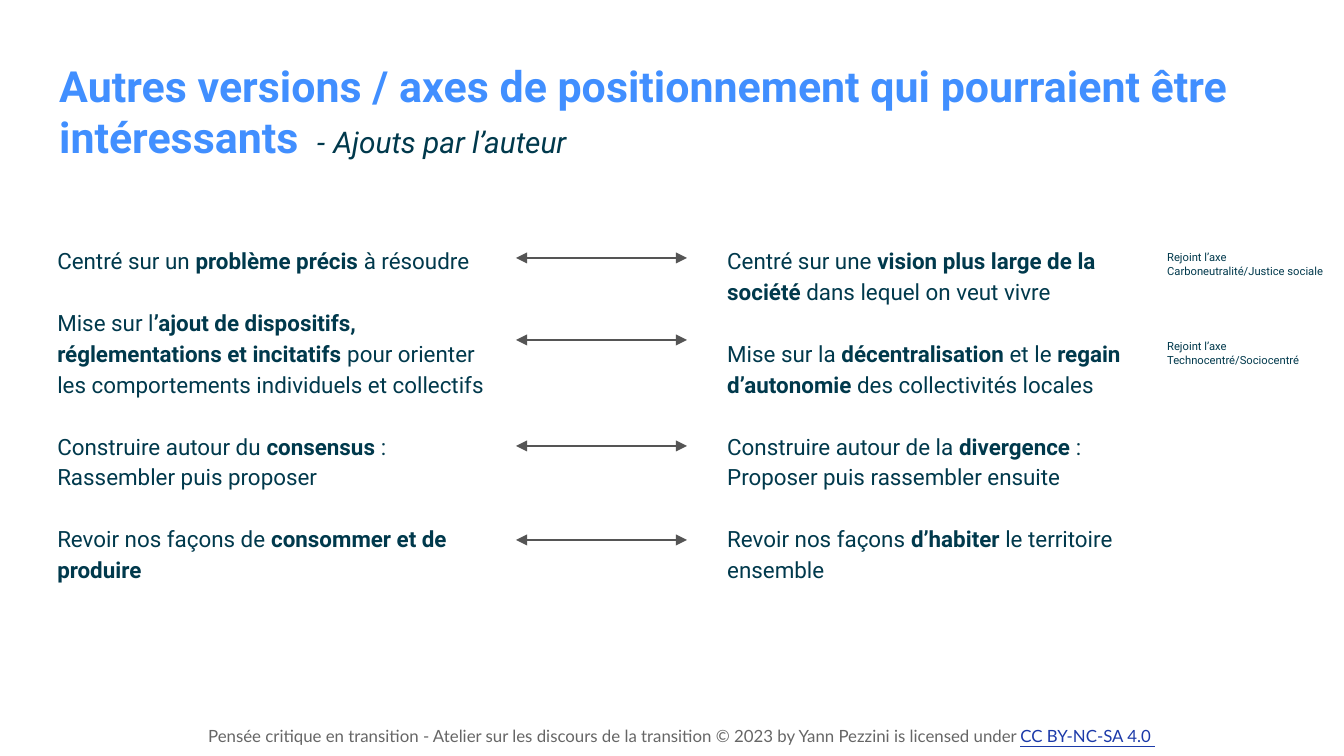
import pptx
import pptx.util
import pptx.dml.color
import pptx.enum.shapes
import pptx.enum.text
import lxml.etree

SCALE = 914400 / 134.4
BLUE = pptx.dml.color.RGBColor(0x41, 0x8F, 0xFF)
NAVY = pptx.dml.color.RGBColor(0x00, 0x39, 0x4C)
GRAY = pptx.dml.color.RGBColor(0x66, 0x66, 0x66)
LINK_BLUE = pptx.dml.color.RGBColor(0x1C, 0x3A, 0xA9)
ARROW_GRAY = pptx.dml.color.RGBColor(0x55, 0x55, 0x55)


def px(length):
    return pptx.util.Emu(round(length * SCALE))


def add_text(paragraphs, box, size, color=NAVY, font="Roboto", line_spacing=1.0, gap=0):
    shape = slide.shapes.add_textbox(*[px(length) for length in box])
    frame = shape.text_frame
    frame.word_wrap = True
    frame.auto_size = pptx.enum.text.MSO_AUTO_SIZE.NONE
    frame.margin_left = frame.margin_right = pptx.util.Inches(0.1)
    frame.margin_top = frame.margin_bottom = pptx.util.Inches(0.1)
    for index, pieces in enumerate(paragraphs):
        paragraph = frame.paragraphs[0] if index == 0 else frame.add_paragraph()
        paragraph.line_spacing = line_spacing
        if index < len(paragraphs) - 1:
            paragraph.space_after = pptx.util.Pt(gap)
        for text, style in pieces:
            run = paragraph.add_run()
            run.text = text
            run.font.name = font
            run.font.size = pptx.util.Pt(style.get("size", size))
            run.font.bold = style.get("bold", False)
            run.font.italic = style.get("italic", False)
            run.font.underline = style.get("underline", False)
            run.font.color.rgb = style.get("color", color)


presentation = pptx.Presentation()
presentation.slide_width = px(1344)
presentation.slide_height = px(756)
slide = presentation.slides.add_slide(presentation.slide_layouts[6])

PLAIN = {}
BOLD = {"bold": True}
SUBTITLE = {"size": 16, "italic": True, "color": NAVY}

add_text(
    [[
        ("Pensée critique en transition - Atelier sur les discours de la transition "
         "© 2023 by Yann Pezzini is licensed under ", PLAIN),
        ("CC BY-NC-SA 4.0 ", {"color": LINK_BLUE, "underline": True}),
    ]],
    (195, 712, 1028, 82), size=9, color=GRAY, font="Lato",
)

add_text(
    [[
        ("Autres versions / axes de positionnement qui pourraient être intéressants ", BOLD),
        (" -", SUBTITLE),
        (" ", {"size": 18, "color": NAVY}),
        ("Ajouts par l’auteur", SUBTITLE),
    ]],
    (46, 46, 1253, 85), size=23, color=BLUE,
)

left_positions = [
    [("Centré sur un ", PLAIN), ("problème précis ", BOLD), ("à résoudre", PLAIN)],
    [("Mise sur l", PLAIN), ("’ajout de dispositifs, réglementations et incitatifs ", BOLD),
     ("pour orienter les comportements individuels et collectifs", PLAIN)],
    [("Construire autour du ", PLAIN), ("consensus", BOLD), (" : Rassembler puis proposer", PLAIN)],
    [("Revoir nos façons de ", PLAIN), ("consommer et de produire", BOLD)],
]
right_positions = [
    [("Centré sur une ", PLAIN), ("vision plus large de la société", BOLD),
     (" dans lequel on veut vivre", PLAIN)],
    [("Mise sur la ", PLAIN), ("décentralisation", BOLD), (" et le ", PLAIN),
     ("regain d’autonomie ", BOLD), ("des collectivités locales", PLAIN)],
    [("Construire autour de la ", PLAIN), ("divergence", BOLD),
     (" : Proposer puis rassembler ensuite", PLAIN)],
    [("Revoir nos façons ", PLAIN), ("d’habiter", BOLD), (" le territoire ensemble", PLAIN)],
]
for positions, left, width in [(left_positions, 44, 462), (right_positions, 714, 423)]:
    add_text(positions, (left, 230, width, 371), size=12, line_spacing=1.15, gap=16.5)

for axis, top in [("Carboneutralité/Justice sociale", 237), ("Technocentré/Sociocentré", 326)]:
    add_text([[("Rejoint l’axe", PLAIN)], [(axis, PLAIN)]], (1154, top, 1030, 54), size=6)

for y in (258, 340, 446, 540):
    arrow = slide.shapes.add_connector(
        pptx.enum.shapes.MSO_CONNECTOR.STRAIGHT, px(516), px(y), px(687), px(y)
    )
    arrow.line.color.rgb = ARROW_GRAY
    arrow.line.width = pptx.util.Pt(0.75)
    line = arrow.line._get_or_add_ln()
    for end in ("a:headEnd", "a:tailEnd"):
        lxml.etree.SubElement(line, pptx.oxml.ns.qn(end), type="triangle")
    lxml.etree.SubElement(arrow._element.spPr, pptx.oxml.ns.qn("a:effectLst"))

presentation.save("out.pptx")
